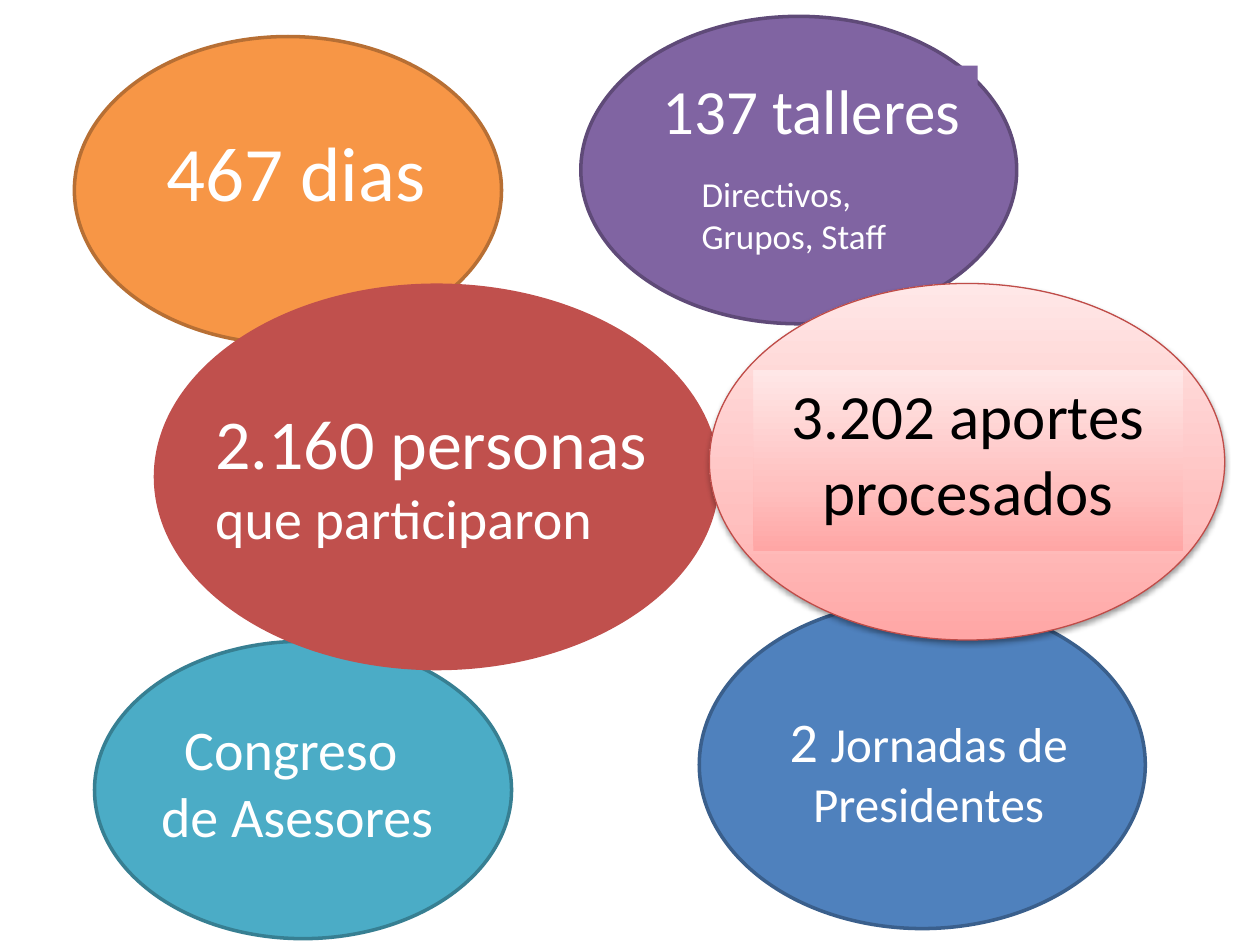
from copy import deepcopy
from lxml import etree
from pptx import Presentation
from pptx import util as u
from pptx.dml.color import RGBColor
from pptx.enum import shapes, text
from pptx.oxml.ns import qn

WHITE, BLACK = "FFFFFF", "000000"
LEFT, CENTER = text.PP_ALIGN.LEFT, text.PP_ALIGN.CENTER
PINK = [(0, "FFA6A5"), (0.35, "FFC0BF"), (1, "FFE7E7")]

# Bubbles from back to front; a label holds paragraphs of (text, size) runs
bubbles = [
    dict(oval=(0.59, 0.29, 3.39, 2.44), fill="F79646", line=("B76F34", 2), labels=[
        dict(box=(1.22, 0.94, 2.28, 0.84), wrap=False, lines=[[("467 dias", 44)]])]),
    dict(oval=(4.61, 0.13, 3.46, 2.44), fill="8064A2", line=("5F4A78", 2), labels=[
        dict(box=(5.16, 0.52, 2.6, 0.71), wrap=False, lines=[[("137 talleres", 36)]]),
        dict(box=(5.47, 1.32, 1.73, 0.77), lines=[[("Directivos, Grupos, Staff", 20)]])]),
    dict(oval=(5.55, 4.77, 3.54, 2.6), fill="4F81BD", line=("3A5F8C", 2), labels=[
        dict(box=(6.03, 5.56, 2.68, 1.11), align=CENTER,
             lines=[[("2 ", 32), ("Jornadas de Presidentes", 28)]])]),
    dict(oval=(0.75, 5.09, 3.31, 2.36), fill="4BACC6", line=("377F92", 2), labels=[
        dict(box=(1.11, 5.62, 2.5, 1.2), align=CENTER,
             lines=[[("Congreso ", 32)], [("de Asesores", 32)]])]),
    dict(oval=(1.22, 2.25, 4.49, 3.07), fill="C0504D", labels=[
        dict(box=(1.61, 3.12, 3.65, 1.31),
             lines=[[("2.160 personas", 40), (" que participaron", 32)]])]),
    dict(oval=(5.63, 2.25, 4.09, 2.83), fill=PINK, line=("BF4C48", 0.75), shadow=True, labels=[
        dict(box=(5.98, 2.94, 3.41, 1.43), align=CENTER, color=BLACK,
             lines=[[("3.202 aportes procesados", 36)]])]),
]


def rgb(value):
    return RGBColor.from_string(value)


def inches(box):
    return [u.Inches(v) for v in box]


def paint(shape, fill):
    """Fill with one colour, or with a bottom-to-top gradient."""
    if isinstance(fill, str):
        shape.fill.solid()
        shape.fill.fore_color.rgb = rgb(fill)
        return
    shape.fill.gradient()
    shape.fill.gradient_angle = 90
    stop_list = shape._element.spPr.find(qn("a:gradFill")).find(qn("a:gsLst"))
    while len(stop_list) < len(fill):
        stop_list.append(deepcopy(stop_list[0]))
    for stop, (position, color) in zip(shape.fill.gradient_stops, fill):
        stop.position = position
        stop.color.rgb = rgb(color)


def cast_shadow(shape):
    effects = shape._element.spPr.find(qn("a:effectLst"))
    outer = etree.SubElement(effects, qn("a:outerShdw"), blurRad=str(u.Pt(3.1)),
                             dist=str(u.Pt(1.6)), dir="5400000", rotWithShape="0")
    color = etree.SubElement(outer, qn("a:srgbClr"), val=BLACK)
    etree.SubElement(color, qn("a:alpha"), val="38000")


def add_oval(slide, bubble):
    oval = slide.shapes.add_shape(shapes.MSO_SHAPE.OVAL, *inches(bubble["oval"]))
    oval.shadow.inherit = False
    paint(oval, bubble["fill"])
    if "line" in bubble:
        color, width = bubble["line"]
        oval.line.color.rgb = rgb(color)
        oval.line.width = u.Pt(width)
    else:
        oval.line.fill.background()
    if bubble.get("shadow"):
        cast_shadow(oval)


def add_label(slide, label, fill):
    box = slide.shapes.add_textbox(*inches(label["box"]))
    paint(box, fill)
    frame = box.text_frame
    frame.word_wrap = label.get("wrap", True)
    frame.auto_size = text.MSO_AUTO_SIZE.SHAPE_TO_FIT_TEXT
    for i, line in enumerate(label["lines"]):
        paragraph = frame.add_paragraph() if i else frame.paragraphs[0]
        paragraph.alignment = label.get("align", LEFT)
        for words, size in line:
            run = paragraph.add_run()
            run.text = words
            for key, value in dict(name="Calibri", size=u.Pt(size)).items():
                setattr(run.font, key, value)
            run.font.color.rgb = rgb(label.get("color", WHITE))


prs = Presentation()
prs.slide_width, prs.slide_height = u.Inches(10), u.Inches(7.5)
slide = prs.slides.add_slide(prs.slide_layouts[6])
for bubble in bubbles:
    add_oval(slide, bubble)
    for label in bubble["labels"]:
        add_label(slide, label, bubble["fill"])
prs.save("out.pptx")
